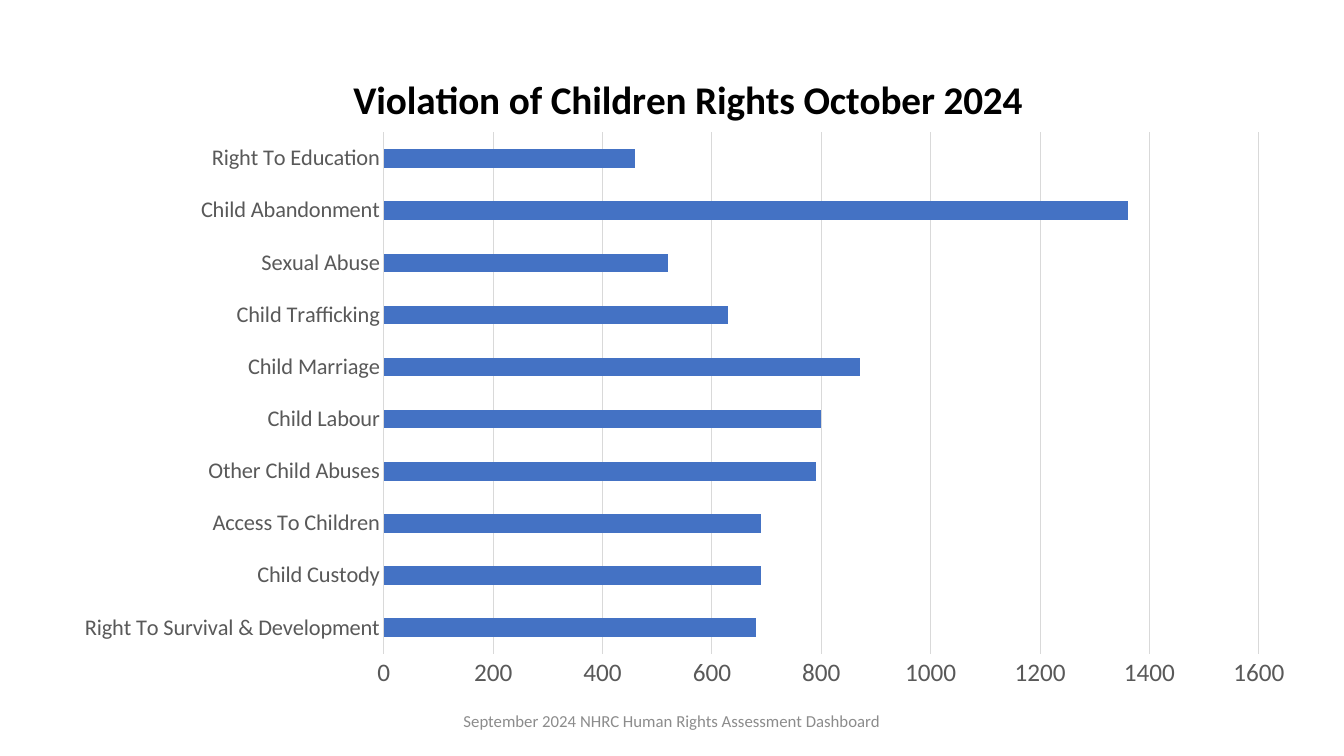
import lxml.etree
import pptx
import pptx.chart.data
import pptx.dml.color
import pptx.enum.chart
import pptx.enum.text
import pptx.oxml.ns
import pptx.util

Pt = pptx.util.Pt
FONT = "Calibri"
BLACK, GRAY, LIGHT, BLUE = "000000", "595959", "D9D9D9", "4472C4"

VIOLATIONS = {
    "Right To Survival & Development": 680,
    "Child Custody": 690,
    "Access To Children": 690,
    "Other Child Abuses": 790,
    "Child Labour": 800,
    "Child Marriage": 870,
    "Child Trafficking": 630,
    "Sexual Abuse": 520,
    "Child Abandonment": 1360,
    "Right To Education": 460,
}


def color(value):
    return pptx.dml.color.RGBColor.from_string(value)


def set_font(font, size, fill, bold=False):
    font.name = FONT
    font.size = Pt(size)
    font.bold = bold
    font.color.rgb = color(fill)


def set_line(line, fill, width):
    line.color.rgb = color(fill)
    line.width = Pt(width)


def write_text(frame, text, size=12, fill=BLACK, bold=False):
    para = frame.paragraphs[0]
    para.alignment = pptx.enum.text.PP_ALIGN.CENTER
    span = para.add_run()
    span.text = text
    set_font(span.font, size, fill, bold)


def add_text(page, text, left, top, width, height, **style):
    box = page.shapes.add_textbox(Pt(left), Pt(top), Pt(width), Pt(height))
    frame = box.text_frame
    frame.word_wrap = True
    frame.vertical_anchor = pptx.enum.text.MSO_ANCHOR.MIDDLE
    write_text(frame, text, **style)


def set_layout(parent, **settings):
    """Place a chart part by fractions of the chart's size."""
    qn = pptx.oxml.ns.qn
    layout = parent.find(qn("c:layout"))
    if layout is None:
        layout = lxml.etree.Element(qn("c:layout"))
        parent.insert(0, layout)
    manual = lxml.etree.SubElement(layout, qn("c:manualLayout"))
    for name, value in settings.items():
        lxml.etree.SubElement(manual, qn("c:" + name)).set("val", str(value))


def style_axis(axis, size):
    axis.major_tick_mark = pptx.enum.chart.XL_TICK_MARK.NONE
    axis.minor_tick_mark = pptx.enum.chart.XL_TICK_MARK.NONE
    set_font(axis.tick_labels.font, size, GRAY)


def add_bar_chart(page, title, values, left, top, width, height):
    data = pptx.chart.data.CategoryChartData()
    data.categories = list(values)
    data.add_series("Series 1", list(values.values()))
    chart = page.shapes.add_chart(
        pptx.enum.chart.XL_CHART_TYPE.BAR_CLUSTERED,
        Pt(left), Pt(top), Pt(width), Pt(height), data).chart
    set_font(chart.font, 10, BLACK)
    chart.has_legend = False

    # Title
    chart.has_title = True
    write_text(chart.chart_title.text_frame, title, size=28, bold=True)
    set_layout(chart.chart_title._element, xMode="edge", yMode="edge", x=0.23, y=0.05)

    # Bars
    plot = chart.plots[0]
    plot.gap_width = 182
    plot.vary_by_categories = False
    fill = plot.series[0].format.fill
    fill.solid()
    fill.fore_color.rgb = color(BLUE)
    set_layout(chart._chartSpace.chart.plotArea, layoutTarget="inner",
               xMode="edge", yMode="edge", x=0.26, y=0.15, w=0.7, h=0.78)

    # Axes
    style_axis(chart.category_axis, 16)
    set_line(chart.category_axis.format.line, LIGHT, 0.75)
    scale = chart.value_axis
    style_axis(scale, 18)
    scale.minimum_scale, scale.maximum_scale, scale.major_unit = 0, 1600, 200
    scale.format.line.fill.background()
    scale.has_major_gridlines = True
    set_line(scale.major_gridlines.format.line, LIGHT, 0.75)


def main():
    deck = pptx.Presentation()
    deck.slide_width, deck.slide_height = Pt(960), Pt(540)
    page = deck.slides.add_slide(deck.slide_layouts[6])

    # Footer
    add_text(page, "September 2024 NHRC Human Rights Assessment Dashboard",
             318, 500.5, 324, 28.75, size=12, fill="8C8C8C")

    # Chart
    add_bar_chart(page, "Violation of Children Rights October 2024", VIOLATIONS,
                  42, 23, 893, 477.5)

    deck.save("out.pptx")


if __name__ == "__main__":
    main()
